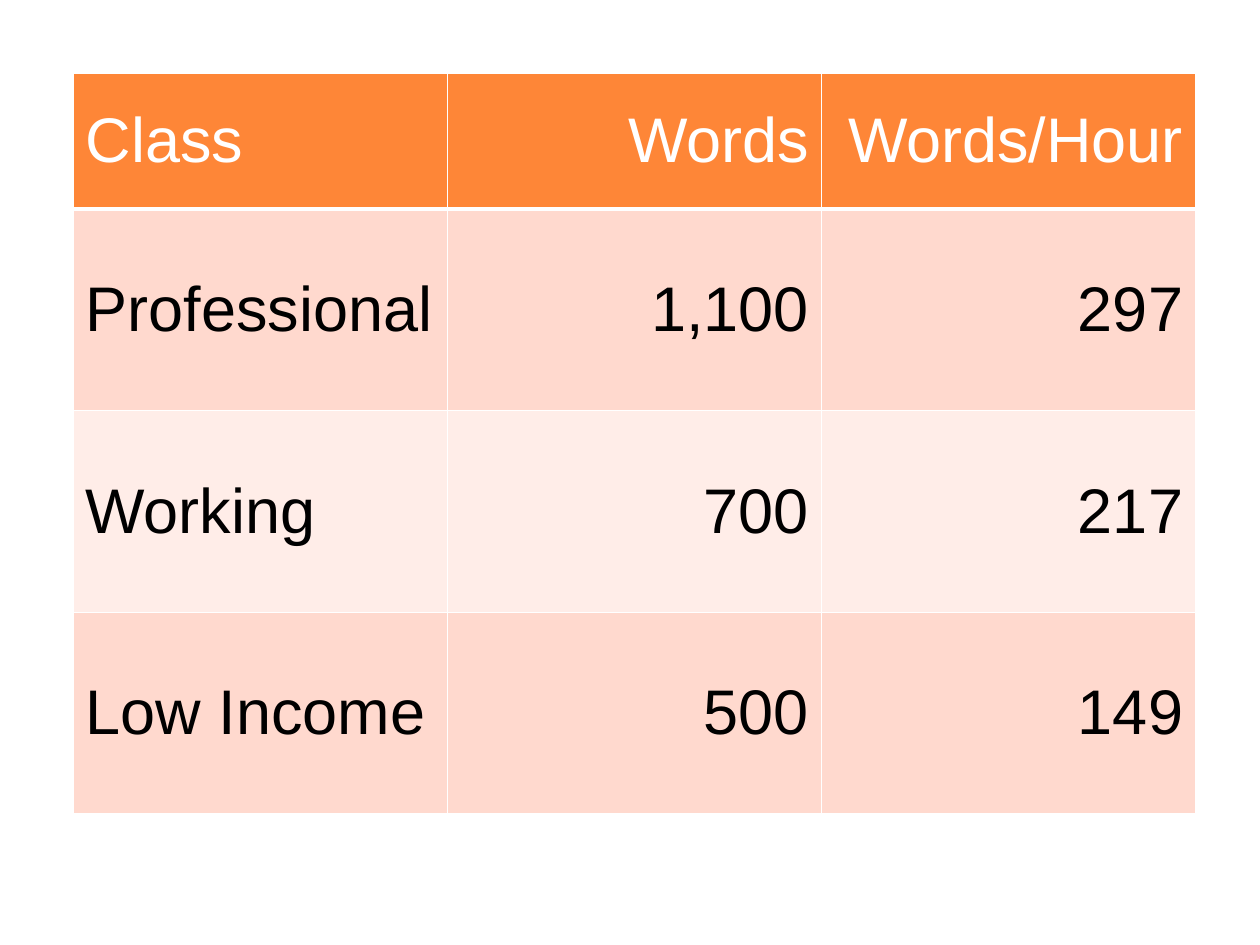
from lxml import etree
from pptx import Presentation
from pptx.dml.color import RGBColor
from pptx.enum.text import MSO_ANCHOR, PP_ALIGN
from pptx.oxml.ns import qn
from pptx.util import Inches, Pt

LEFT, RIGHT = PP_ALIGN.LEFT, PP_ALIGN.RIGHT
MIDDLE = MSO_ANCHOR.MIDDLE

COLORS = {
    "header": "FE8637",
    "odd_band": "FFD9CE",
    "even_band": "FFEDE8",
    "header_text": "FFFFFF",
    "body_text": "000000",
    "grid_line": "FFFFFF",
}
FONT_FORMAT = {"name": "Arial", "size": Pt(36), "bold": False}

ROWS = [
    ("Class", "Words", "Words/Hour"),
    ("Professional", "1,100", "297"),
    ("Working", "700", "217"),
    ("Low Income", "500", "149"),
]
MARGIN = Inches(0.58)
COLUMN_WIDTH = Inches(2.97)
HEADER_HEIGHT, BODY_HEIGHT = Inches(1.08), Inches(1.6)


def add_borders(cell, widths):
    """Draw the cell's edges; widths maps a:ln* tags to points, in schema order."""
    properties = cell._tc.get_or_add_tcPr()
    for position, (tag, width) in enumerate(widths.items()):
        line = etree.Element(qn(tag), w=str(Pt(width)))
        fill = etree.SubElement(line, qn("a:solidFill"))
        etree.SubElement(fill, qn("a:srgbClr"), val=COLORS["grid_line"])
        properties.insert(position, line)


prs = Presentation()
prs.slide_width, prs.slide_height = Inches(10), Inches(7.5)
slide = prs.slides.add_slide(prs.slide_layouts[6])

word_table = slide.shapes.add_table(
    len(ROWS), len(ROWS[0]), MARGIN, MARGIN,
    COLUMN_WIDTH * len(ROWS[0]),
    HEADER_HEIGHT + BODY_HEIGHT * (len(ROWS) - 1),
).table
for column in word_table.columns:
    column.width = COLUMN_WIDTH

for r, entries in enumerate(ROWS):
    is_header = r == 0
    word_table.rows[r].height = HEADER_HEIGHT if is_header else BODY_HEIGHT
    band = "header" if is_header else "odd_band" if r % 2 else "even_band"
    text_color = "header_text" if is_header else "body_text"
    borders = {"a:lnL": 1, "a:lnR": 1, "a:lnT": 1, "a:lnB": 3 if is_header else 1}

    for c, entry in enumerate(entries):
        cell = word_table.cell(r, c)
        cell.text = entry
        cell.vertical_anchor = MIDDLE
        cell.fill.solid()
        cell.fill.fore_color.rgb = RGBColor.from_string(COLORS[band])
        add_borders(cell, borders)

        paragraph = cell.text_frame.paragraphs[0]
        paragraph.alignment = RIGHT if c else LEFT
        font = paragraph.runs[0].font
        for attribute, value in FONT_FORMAT.items():
            setattr(font, attribute, value)
        font.color.rgb = RGBColor.from_string(COLORS[text_color])

prs.save("out.pptx")
